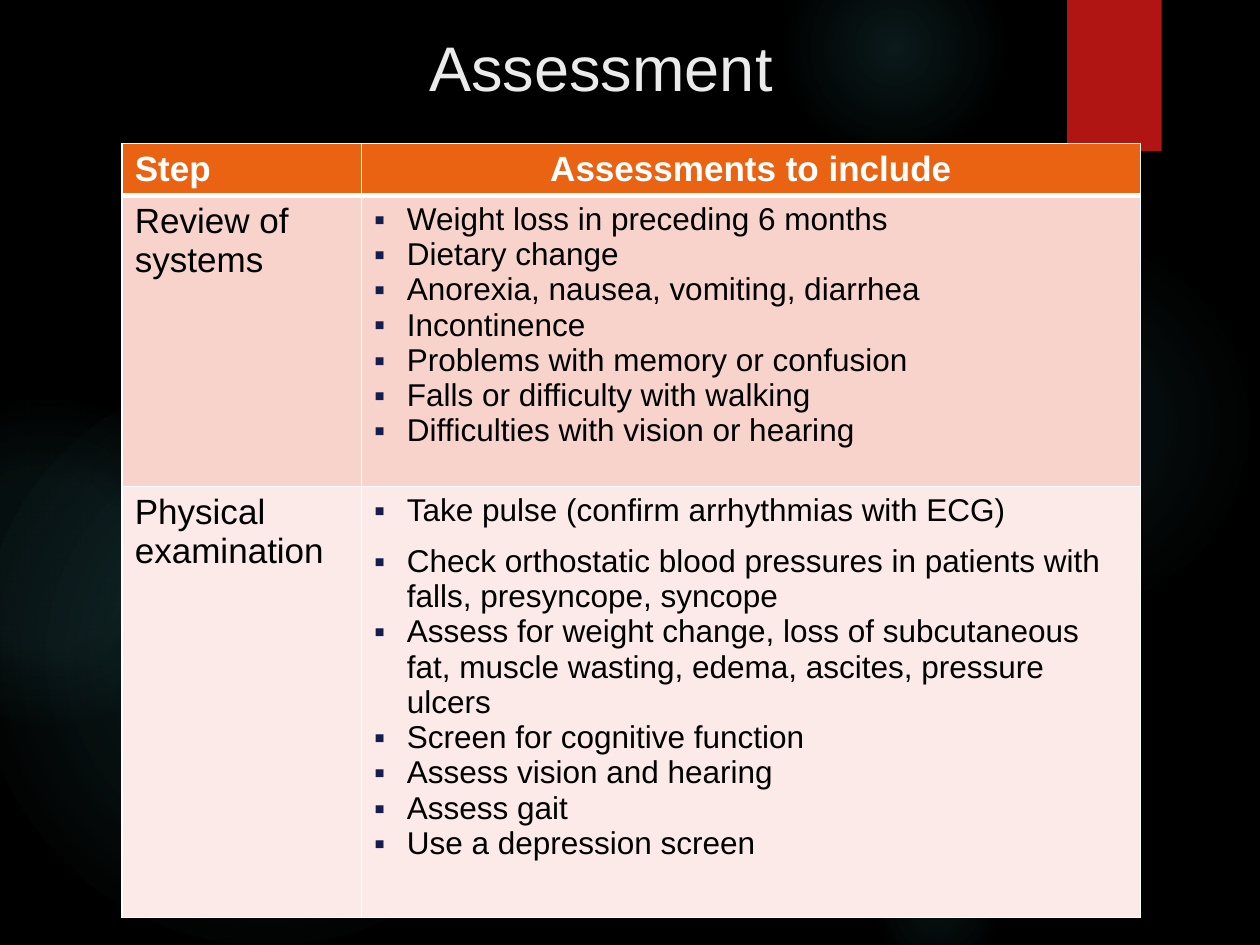
from dataclasses import dataclass

import pptx
import pptx.dml.color
import pptx.enum.shapes
import pptx.enum.text
import pptx.oxml
import pptx.oxml.ns
import pptx.util
from pptx.dml.color import RGBColor
from pptx.util import Inches, Pt

BLACK = RGBColor(0x00, 0x00, 0x00)
WHITE = RGBColor(0xFF, 0xFF, 0xFF)
TITLE_GREY = RGBColor(0xEB, 0xEB, 0xEB)
TEAL = RGBColor(0x50, 0xB9, 0xC1)
RED = RGBColor(0xB0, 0x15, 0x13)
ORANGE = RGBColor(0xEA, 0x63, 0x12)
PINK = RGBColor(0xF7, 0xD3, 0xCC)
PALE_PINK = RGBColor(0xFB, 0xEA, 0xE7)
NAVY = RGBColor(0x13, 0x1D, 0x4F)

CENTER = pptx.enum.text.PP_ALIGN.CENTER
LEFT = pptx.enum.text.PP_ALIGN.LEFT
SHAPE = pptx.enum.shapes.MSO_SHAPE
NS = pptx.oxml.ns.nsdecls("a")


@dataclass
class Glow:
    left: float
    top: float
    size: float
    stops: list[tuple[int, int]]  # position and opacity, in percent


@dataclass
class Step:
    name: str
    items: list[str]
    fill: RGBColor
    gaps: dict[int, int]  # space before an item, in points


GLOWS = [
    Glow(6.89, 1.83, 3.08, [(0, 7), (36, 6), (69, 0)]),
    Glow(6.22, -0.5, 1.75, [(0, 14), (36, 7), (73, 0)]),
    Glow(6.89, 6.67, 1.08, [(0, 9), (36, 5), (66, 0)]),
    Glow(-0.17, 2.92, 4.58, [(0, 11), (36, 10), (75, 0)]),
    Glow(-0.92, 3.17, 2.58, [(0, 8), (36, 8), (72, 0)]),
]
STEPS = [
    Step("Review of systems", [
        "Weight loss in preceding 6 months",
        "Dietary change",
        "Anorexia, nausea, vomiting, diarrhea",
        "Incontinence",
        "Problems with memory or confusion",
        "Falls or difficulty with walking",
        "Difficulties with vision or hearing",
    ], PINK, {}),
    Step("Physical examination", [
        "Take pulse (confirm arrhythmias with ECG)",
        "Check orthostatic blood pressures in patients with falls, presyncope, syncope",
        "Assess for weight change, loss of subcutaneous fat, muscle wasting, edema, "
        "ascites, pressure ulcers",
        "Screen for cognitive function",
        "Assess vision and hearing",
        "Assess gait",
        "Use a depression screen",
    ], PALE_PINK, {1: 9}),
]
COL_WIDTHS = [1.9, 6.18]
ROW_HEIGHTS = [0.41, 2.31, 3.42]


def add_plain_shape(s, kind, left: float, top: float, width: float, height: float):
    sp = s.shapes.add_shape(kind, Inches(left), Inches(top), Inches(width), Inches(height))
    sp.shadow.inherit = False
    sp.line.fill.background()
    return sp


def add_glow(s, glow: Glow) -> None:
    sp = add_plain_shape(s, SHAPE.OVAL, glow.left, glow.top, glow.size, glow.size)
    stops = "".join(
        f'<a:gs pos="{pos * 1000}"><a:srgbClr val="{TEAL}">'
        f'<a:alpha val="{alpha * 1000}"/></a:srgbClr></a:gs>'
        for pos, alpha in glow.stops)
    grad = pptx.oxml.parse_xml(
        f'<a:gradFill {NS}><a:gsLst>{stops}</a:gsLst><a:path path="circle">'
        '<a:fillToRect l="50000" t="50000" r="50000" b="50000"/></a:path></a:gradFill>')
    sp._element.spPr.find(pptx.oxml.ns.qn("a:prstGeom")).addnext(grad)


def write(p, text: str, size: int, color: RGBColor, bold: bool = False, align=LEFT) -> None:
    p.alignment = align
    r = p.add_run()
    r.text = text
    r.font.color.rgb = color
    for name, value in {"name": "Arial", "size": Pt(size), "bold": bold}.items():
        setattr(r.font, name, value)


def add_bullet(p) -> None:
    pPr = p._p.get_or_add_pPr()
    pPr.set("marL", str(Inches(0.26)))
    pPr.set("indent", str(-Inches(0.26)))
    for xml in (f'<a:buClr {NS}><a:srgbClr val="{NAVY}"/></a:buClr>',
                f'<a:buFont {NS} typeface="Arial"/>',
                f'<a:buChar {NS} char="▪"/>'):
        pPr.append(pptx.oxml.parse_xml(xml))


def format_cell(cell, fill: RGBColor, top: int = 1, bottom: int = 1) -> None:
    cell.fill.solid()
    cell.fill.fore_color.rgb = fill
    tcPr = cell._tc.get_or_add_tcPr()
    for i, (side, width) in enumerate({"L": 1, "R": 1, "T": top, "B": bottom}.items()):
        tcPr.insert(i, pptx.oxml.parse_xml(
            f'<a:ln{side} {NS} w="{Pt(width)}"><a:solidFill>'
            f'<a:srgbClr val="{WHITE}"/></a:solidFill></a:ln{side}>'))


def add_steps_table(s) -> None:
    tbl = s.shapes.add_table(
        len(ROW_HEIGHTS), len(COL_WIDTHS), Inches(0.97), Inches(1.14),
        Inches(sum(COL_WIDTHS)), Inches(sum(ROW_HEIGHTS))).table
    for col, width in zip(tbl.columns, COL_WIDTHS):
        col.width = Inches(width)
    for row, height in zip(tbl.rows, ROW_HEIGHTS):
        row.height = Inches(height)

    # Header row
    for i, (text, align) in enumerate([("Step", LEFT), ("Assessments to include", CENTER)]):
        cell = tbl.cell(0, i)
        format_cell(cell, ORANGE, bottom=3)
        write(cell.text_frame.paragraphs[0], text, 20, WHITE, True, align)

    # One row for each step
    for i, step in enumerate(STEPS, start=1):
        name, items = tbl.cell(i, 0), tbl.cell(i, 1)
        for cell in (name, items):
            format_cell(cell, step.fill, top=3 if i == 1 else 1)
        write(name.text_frame.paragraphs[0], step.name, 20, BLACK)
        tf = items.text_frame
        for j, item in enumerate(step.items):
            p = tf.add_paragraph() if j else tf.paragraphs[0]
            write(p, item, 18, BLACK)
            p.space_before = Pt(step.gaps.get(j, 0))
            add_bullet(p)


def main() -> None:
    prs = pptx.Presentation()
    prs.slide_width, prs.slide_height = Inches(10), Inches(7.5)
    s = prs.slides.add_slide(prs.slide_layouts[5])

    # Background
    s.background.fill.solid()
    s.background.fill.fore_color.rgb = BLACK
    for glow in GLOWS:
        add_glow(s, glow)
    bar = add_plain_shape(s, SHAPE.RECTANGLE, 8.47, 0, 0.75, 1.2)
    bar.fill.solid()
    bar.fill.fore_color.rgb = RED

    # Title
    title = s.shapes.title
    box = {"left": 0.88, "top": 0.18, "width": 7.92, "height": 1.08}
    for name, value in box.items():
        setattr(title, name, Inches(value))
    tf = title.text_frame
    tf.vertical_anchor = pptx.enum.text.MSO_ANCHOR.TOP
    write(tf.paragraphs[0], "Assessment ", 36, TITLE_GREY, align=CENTER)

    add_steps_table(s)
    prs.save("out.pptx")


if __name__ == "__main__":
    main()
